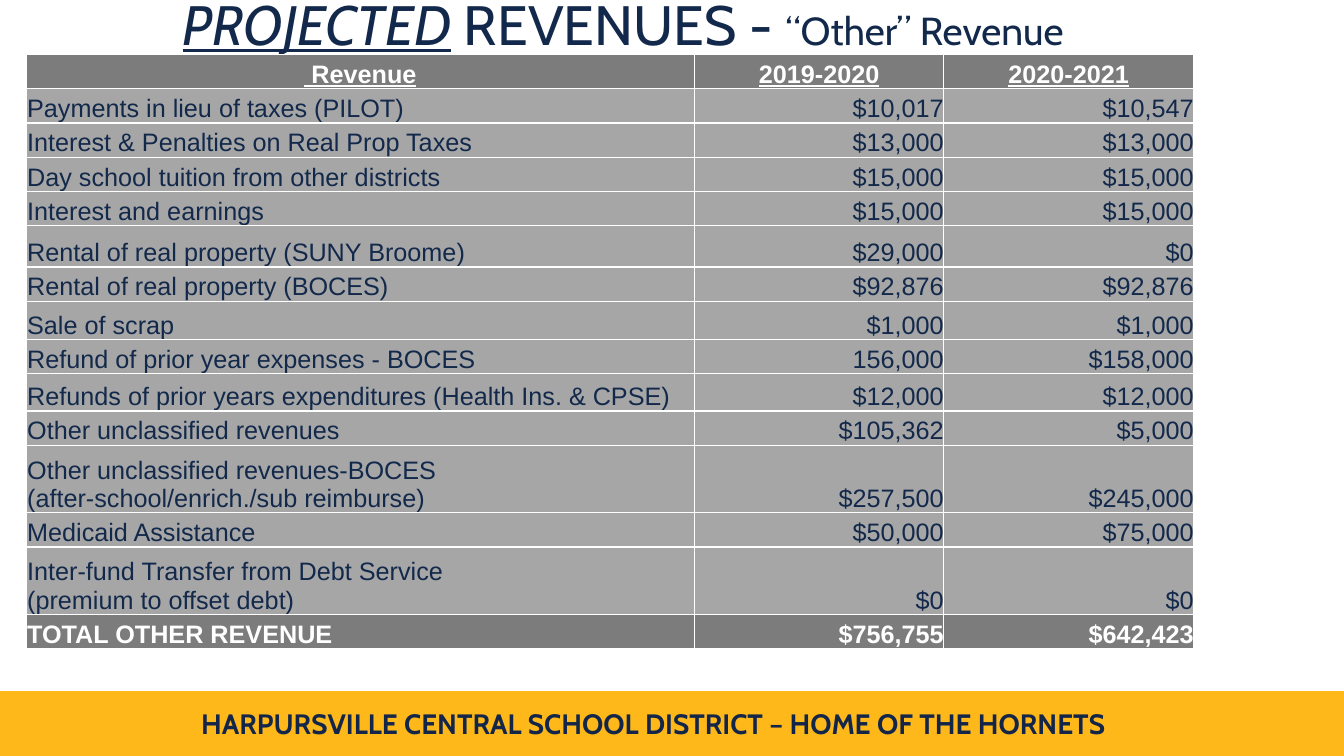
from dataclasses import dataclass

from lxml import etree
from pptx import Presentation
from pptx.dml.color import RGBColor
from pptx.enum.shapes import MSO_SHAPE
from pptx.enum.text import MSO_ANCHOR, MSO_AUTO_SIZE, PP_ALIGN
from pptx.oxml.ns import qn
from pptx.util import Inches, Pt

RECT = MSO_SHAPE.RECTANGLE
MIDDLE, BOTTOM = MSO_ANCHOR.MIDDLE, MSO_ANCHOR.BOTTOM
NO_FIT = MSO_AUTO_SIZE.NONE
LEFT, CENTER, RIGHT = PP_ALIGN.LEFT, PP_ALIGN.CENTER, PP_ALIGN.RIGHT


@dataclass(frozen=True)
class Theme:
    """Colours, fonts and type sizes of the deck."""

    navy: str = "13294B"
    ink: str = "132649"
    gold: str = "FFB819"
    white: str = "FFFFFF"
    dark: str = "7C7C7C"
    light: str = "A6A6A6"
    head: str = "Cabin"
    body: str = "Arial"
    title: float = 39.6
    sub: float = 27.9
    foot: float = 20
    cell: float = 18


THEME = Theme()

TITLE = [
    ("PROJECTED", THEME.title, True),
    (" REVENUES - ", THEME.title, False),
    ("“Other” Revenue", THEME.sub, False),
]
FOOTER = "HARPURSVILLE CENTRAL SCHOOL DISTRICT – HOME OF THE HORNETS"
COLS = [6.63, 2.47, 2.48]
ROWS = [
    (0.34, " Revenue", "2019-2020", "2020-2021"),
    (0.34, "Payments in lieu of taxes (PILOT)", "$10,017", "$10,547"),
    (0.34, "Interest & Penalties on Real Prop Taxes", "$13,000", "$13,000"),
    (0.34, "Day school tuition from other districts", "$15,000", "$15,000"),
    (0.34, "Interest and earnings", "$15,000", "$15,000"),
    (0.41, "Rental of real property (SUNY Broome)", "$29,000", "$0"),
    (0.34, "Rental of real property (BOCES)", "$92,876", "$92,876"),
    (0.38, "Sale of scrap", "$1,000", "$1,000"),
    (0.34, "Refund of prior year expenses - BOCES", "156,000", "$158,000"),
    (0.37, "Refunds of prior years expenditures (Health Ins. & CPSE)",
     "$12,000", "$12,000"),
    (0.34, "Other unclassified revenues", "$105,362", "$5,000"),
    (0.67, "Other unclassified revenues-BOCES\v(after-school/enrich./sub reimburse)",
     "$257,500", "$245,000"),
    (0.34, "Medicaid Assistance", "$50,000", "$75,000"),
    (0.67, "Inter-fund Transfer from Debt Service\n(premium to offset debt)",
     "$0", "$0"),
    (0.34, "TOTAL OTHER REVENUE", "$756,755", "$642,423"),
]


def put(obj, **form):
    """Set each given attribute on an object."""
    for name, value in form.items():
        setattr(obj, name, value)


def style(font, color, **form):
    """Colour a font and set its format values."""
    put(font, **form)
    font.color.rgb = RGBColor.from_string(color)


def paint(fill, color):
    """Give a fill one solid colour."""
    fill.solid()
    fill.fore_color.rgb = RGBColor.from_string(color)


def pad(frame):
    """Set the usual insets and wrapping of a text frame."""
    put(frame, word_wrap=True, auto_size=NO_FIT, vertical_anchor=MIDDLE,
        margin_left=Inches(0.1), margin_right=Inches(0.1),
        margin_top=Inches(0.05), margin_bottom=Inches(0.05))


def edge(cell):
    """Draw a thin white border on all sides of a cell."""
    props = cell._tc.get_or_add_tcPr()
    for at, side in enumerate(("lnL", "lnR", "lnT", "lnB")):
        line = etree.Element(qn(f"a:{side}"), w=str(Pt(1)))
        fill = etree.SubElement(line, qn("a:solidFill"))
        etree.SubElement(fill, qn("a:srgbClr"), val=THEME.white)
        props.insert(at, line)


def add_title(slide, left, top, width, height):
    """Place the title with its styled runs."""
    shape = slide.shapes.title
    put(shape, left=Inches(left), top=Inches(top),
        width=Inches(width), height=Inches(height))
    paint(shape.fill, THEME.white)
    pad(shape.text_frame)
    para = shape.text_frame.paragraphs[0]
    put(para, alignment=CENTER, line_spacing=0.9)
    for text, size, mark in TITLE:
        run = para.add_run()
        run.text = text
        style(run.font, THEME.navy, name=THEME.head, size=Pt(size),
              italic=mark, underline=mark)


def add_foot(slide, left, top, width, height):
    """Place the gold band and the district line on it."""
    band = slide.shapes.add_shape(
        RECT, Inches(left), Inches(top), Inches(width), Inches(height))
    band.shadow.inherit = False
    paint(band.fill, THEME.gold)
    paint(band.line.fill, THEME.gold)
    band.line.width = Pt(1)
    box = slide.shapes.add_textbox(
        Inches(left + 1.76), Inches(top + 0.1), Inches(9.44), Inches(0.44))
    pad(box.text_frame)
    para = box.text_frame.paragraphs[0]
    para.text = FOOTER
    para.alignment = CENTER
    style(para.font, THEME.ink, name=THEME.head, size=Pt(THEME.foot), bold=True)


def fill_cell(cell, text, align, head, strong):
    """Write and format one table cell."""
    cell.text = text
    inset = Inches(0.01 if align != RIGHT else 0)
    put(cell, vertical_anchor=BOTTOM, margin_left=inset, margin_right=inset,
        margin_top=inset, margin_bottom=0)
    paint(cell.fill, THEME.dark if strong else THEME.light)
    edge(cell)
    for para in cell.text_frame.paragraphs:
        para.alignment = align
        style(para.font, THEME.white if strong else THEME.navy,
              name=THEME.body, size=Pt(THEME.cell), bold=strong, underline=head)


def add_grid(slide, left, top, width, height):
    """Place the revenue table."""
    grid = slide.shapes.add_table(
        len(ROWS), len(COLS), Inches(left), Inches(top),
        Inches(width), Inches(height)).table
    for col, size in zip(grid.columns, COLS):
        col.width = Inches(size)
    for at, (size, *texts) in enumerate(ROWS):
        grid.rows[at].height = Inches(size)
        head = at == 0
        strong = head or at == len(ROWS) - 1
        for col, text in enumerate(texts):
            align = CENTER if head else RIGHT if col else LEFT
            fill_cell(grid.cell(at, col), text, align, head, strong)


def main():
    """Build the slide and save it."""
    deck = Presentation()
    put(deck, slide_width=Inches(13.33), slide_height=Inches(7.5))
    slide = deck.slides.add_slide(deck.slide_layouts[5])
    add_foot(slide, 0, 6.86, 13.33, 0.63)
    add_title(slide, 0.86, 0, 10.64, 0.54)
    add_grid(slide, 0.26, 0.54, sum(COLS), sum(row[0] for row in ROWS))
    deck.save("out.pptx")


if __name__ == "__main__":
    main()
